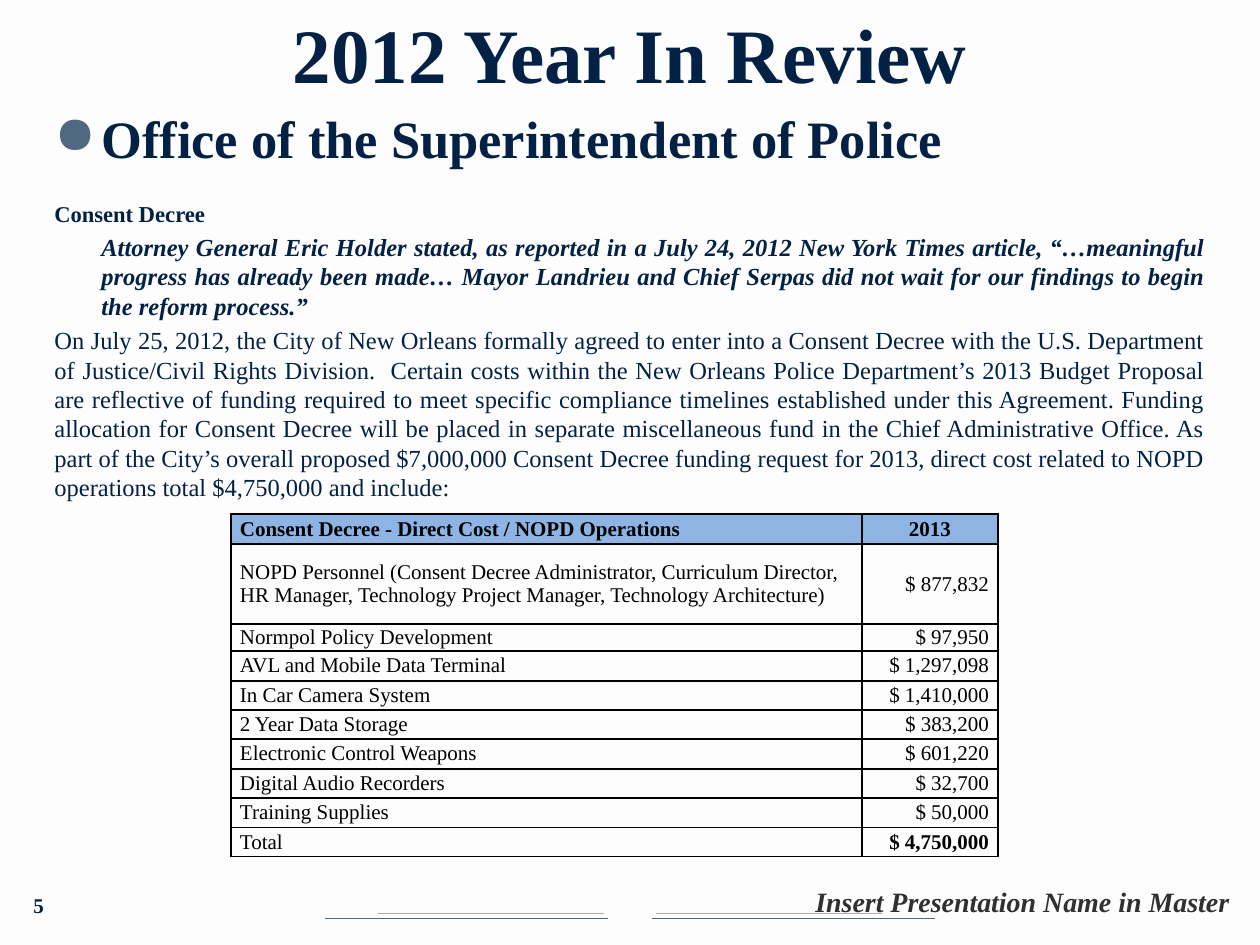
from lxml.etree import SubElement
from pptx import Presentation
from pptx.dml.color import RGBColor
from pptx.enum.shapes import MSO_CONNECTOR
from pptx.enum.text import MSO_ANCHOR, PP_ALIGN
from pptx.oxml.ns import qn
from pptx.util import Emu, Pt

INK = {"navy": "032145", "steel": "506882", "gray": "ABACAE", "dark": "303030",
       "black": "000000", "blue": "8DB4E2", "paper": "FDFDFD"}
FONT = "Times New Roman"
LEFT, MID, RIGHT, FULL = (PP_ALIGN.LEFT, PP_ALIGN.CENTER,
                          PP_ALIGN.RIGHT, PP_ALIGN.JUSTIFY)


def px(num):
    return Emu(round(num * 914400 / 126))


def tint(name):
    return RGBColor.from_string(INK[name])


class Deck:
    """Holds the style and the current slide."""

    def __init__(self):
        self.show = Presentation()
        self.show.slide_width, self.show.slide_height = px(1260), px(945)
        self.slide = self.show.slides.add_slide(self.show.slide_layouts[6])
        fill = self.slide.background.fill
        fill.solid()
        fill.fore_color.rgb = tint("paper")

    def line(self, left, right, top, ink, width):
        rule = self.slide.shapes.add_connector(
            MSO_CONNECTOR.STRAIGHT, px(left), px(top), px(right), px(top))
        rule.line.color.rgb = tint(ink)
        rule.line.width = Pt(width)
        SubElement(rule._element.spPr, qn("a:effectLst"))

    def run(self, para, text, size, ink="navy", bold=True, slant=False):
        run = para.add_run()
        run.text = text
        font = run.font
        font.name, font.size = FONT, Pt(size)
        font.bold, font.italic = bold, slant
        font.color.rgb = tint(ink)

    def box(self, left, top, width, height, anchor):
        frame = self.slide.shapes.add_textbox(
            px(left), px(top), px(width), px(height)).text_frame
        frame.word_wrap = True
        frame.vertical_anchor = anchor
        return frame

    def label(self, area, text, size, anchor, align=LEFT, **look):
        para = self.box(*area, anchor).paragraphs[0]
        para.alignment = align
        self.run(para, text, size, **look)

    def body(self, area, items):
        frame = self.box(*area, MSO_ANCHOR.TOP)
        for num, item in enumerate(items):
            para = frame.add_paragraph() if num else frame.paragraphs[0]
            props = para._p.get_or_add_pPr()
            props.set("marL", str(px(item.get("margin", 0))))
            props.set("indent", str(px(item.get("indent", 0))))
            if "bullet" in item:
                color = SubElement(props, qn("a:buClr"))
                SubElement(color, qn("a:srgbClr"), val=INK["steel"])
                SubElement(props, qn("a:buChar"), char=item["bullet"])
            para.alignment = item.get("align", FULL)
            para.space_before = Pt(item.get("gap", 0))
            if "pitch" in item:
                para.line_spacing = Pt(item["pitch"])
            for text, size, look in item["runs"]:
                self.run(para, text, size, **look)

    def edge(self, cell):
        props = cell._tc.get_or_add_tcPr()
        for num, tag in enumerate(("a:lnL", "a:lnR", "a:lnT", "a:lnB")):
            side = props.makeelement(qn(tag), {"w": str(Pt(1))})
            fill = SubElement(side, qn("a:solidFill"))
            SubElement(fill, qn("a:srgbClr"), val=INK["black"])
            props.insert(num, side)

    def cell(self, cell, text, align, head, bold):
        cell.margin_left = cell.margin_right = px(9)
        cell.margin_top = cell.margin_bottom = 0
        cell.vertical_anchor = MSO_ANCHOR.MIDDLE
        if head:
            cell.fill.solid()
            cell.fill.fore_color.rgb = tint("blue")
        else:
            cell.fill.background()
        self.edge(cell)
        para = cell.text_frame.paragraphs[0]
        para.alignment = align
        self.run(para, text, 12, "black", bold)

    def table(self, left, top, cols, highs, rows):
        grid = self.slide.shapes.add_table(
            len(rows), len(cols), px(left), px(top),
            px(sum(cols)), px(sum(highs))).table
        grid.first_row = grid.horz_banding = False
        for col, width in zip(grid.columns, cols):
            col.width = px(width)
        for row, high in zip(grid.rows, highs):
            row.height = px(high)
        for num, (name, cost) in enumerate(rows):
            head, last = num == 0, num == len(rows) - 1
            self.cell(grid.cell(num, 0), name, LEFT, head, head)
            self.cell(grid.cell(num, 1), cost, MID if head else RIGHT,
                      head, head or last)


QUOTE = (
    "Attorney General Eric Holder stated, as reported in a July 24, 2012 "
    "New York Times article, “…meaningful progress has already been made… "
    "Mayor Landrieu and Chief Serpas did not wait for our findings to begin "
    "the reform process.”")
STORY = (
    "On July 25, 2012, the City of New Orleans formally agreed to enter into "
    "a Consent Decree with the U.S. Department of Justice/Civil Rights "
    "Division.  Certain costs within the New Orleans Police Department’s "
    "2013 Budget Proposal are reflective of funding required to meet specific "
    "compliance timelines established under this Agreement. Funding "
    "allocation for Consent Decree will be placed in separate miscellaneous "
    "fund in the Chief Administrative Office. As part of the City’s overall "
    "proposed $7,000,000 Consent Decree funding request for 2013, direct cost "
    "related to NOPD operations total $4,750,000 and include:")
ITEMS = [
    {"margin": 47, "indent": -47, "bullet": "●", "align": LEFT,
     "runs": [("Office of the Superintendent of Police", 30, {})]},
    {"margin": 47, "indent": -47, "gap": 17.5,
     "runs": [("Consent ", 12.9, {}), ("Decree", 13, {})]},
    {"margin": 47, "gap": 2.8, "pitch": 16.8,
     "runs": [(QUOTE, 14, {"slant": True})]},
    {"gap": 2.8, "pitch": 16.8, "runs": [(STORY, 14, {"bold": False})]},
]
COSTS = [
    ("Consent Decree - Direct Cost / NOPD Operations", "2013"),
    ("NOPD Personnel (Consent Decree Administrator, Curriculum Director, "
     "HR Manager, Technology Project Manager, Technology Architecture)",
     "$ 877,832"),
    ("Normpol Policy Development", "$ 97,950"),
    ("AVL and Mobile Data Terminal", "$ 1,297,098"),
    ("In Car Camera System", "$ 1,410,000"),
    ("2 Year Data Storage", "$ 383,200"),
    ("Electronic Control Weapons", "$ 601,220"),
    ("Digital Audio Recorders", "$ 32,700"),
    ("Training Supplies", "$ 50,000"),
    ("Total", "$ 4,750,000"),
]
HIGHS = [30, 80, 27, 30, 29, 29, 30, 29, 30, 29]


def main():
    deck = Deck()
    for left in (652, 325):
        deck.line(left, left + 283, 918, "steel", 0.3)
    for left in (656, 378):
        deck.line(left, left + 226, 913, "gray", 0.5)
    deck.label((683, 874, 559, 50), "Insert Presentation Name in Master", 16,
               MSO_ANCHOR.BOTTOM, RIGHT, ink="dark", slant=True)
    deck.body((42, 100, 1176, 740), ITEMS)
    deck.label((21, 869, 158, 55), "5", 12, MSO_ANCHOR.BOTTOM)
    deck.label((21, 21, 1218, 63), "2012 Year In Review", 44,
               MSO_ANCHOR.MIDDLE, MID)
    deck.table(231, 514, [631, 136], HIGHS, COSTS)
    deck.show.save("out.pptx")


if __name__ == "__main__":
    main()
